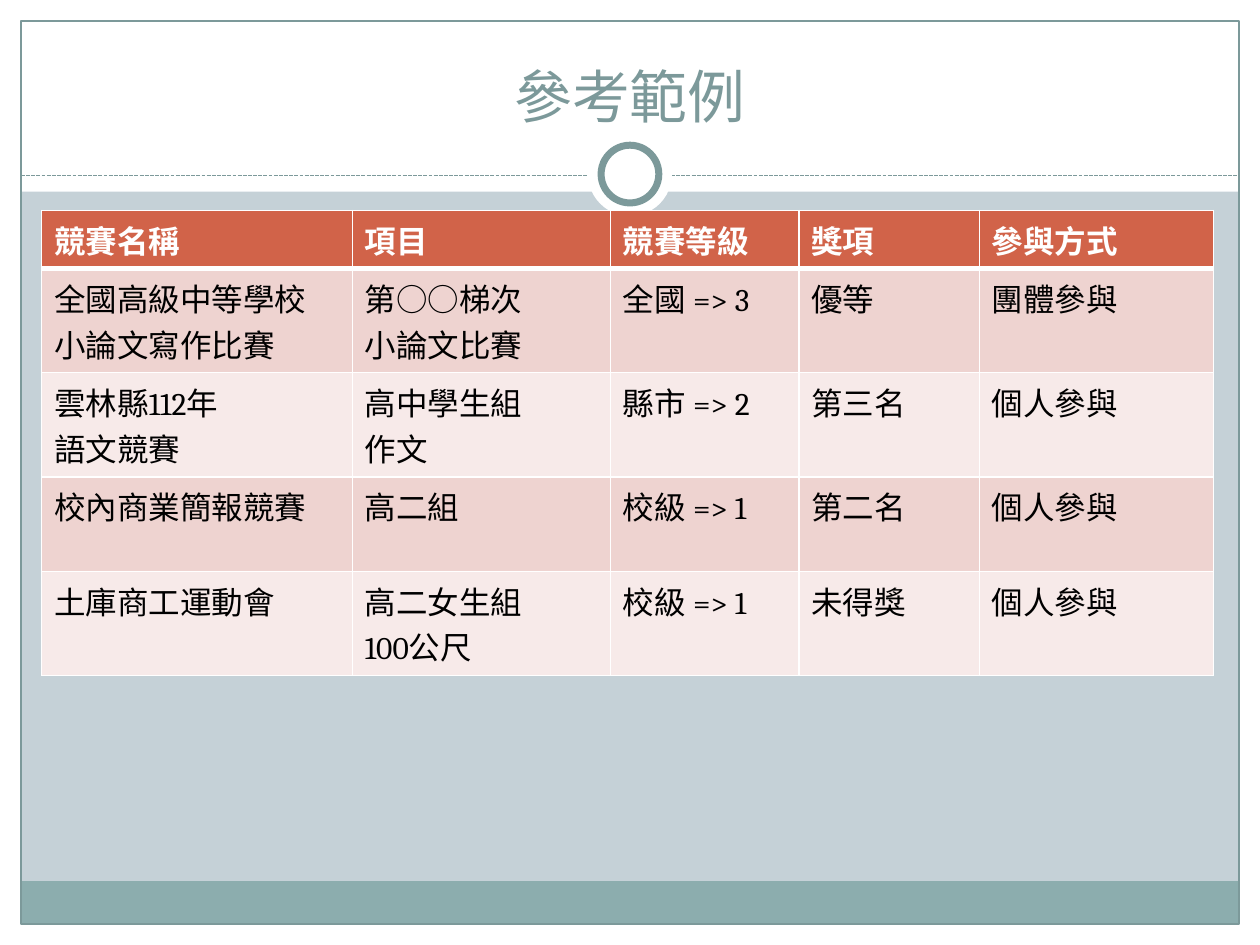
from lxml.etree import SubElement
from pptx import Presentation
from pptx.dml.color import RGBColor
from pptx.enum.dml import MSO_LINE
from pptx.enum.shapes import MSO_CONNECTOR, MSO_SHAPE
from pptx.enum.text import MSO_ANCHOR, MSO_AUTO_SIZE, PP_ALIGN
from pptx.oxml import parse_xml
from pptx.oxml.ns import nsdecls, qn
from pptx.util import Pt

WIDE, HIGH, EDGE = 720, 540, 12
WHITE, GREY, TEAL = "FFFFFF", "7C999A", "8CADAE"
FACE = "Cambria"
COLS = [177.5, 147.5, 107.7, 103.2, 133.9]
ROWS = [33, 59.5, 59.5, 54, 59.5]
DATA = [
    ["競賽名稱", "項目", "競賽等級", "獎項", "參與方式"],
    ["全國高級中等學校\n小論文寫作比賽", "第○○梯次\n小論文比賽", "全國 => 3", "優等", "團體參與"],
    ["雲林縣112年\n語文競賽", "高中學生組\n作文", "縣市 => 2", "第三名", "個人參與"],
    ["校內商業簡報競賽", "高二組", "校級 => 1", "第二名", "個人參與"],
    ["土庫商工運動會", "高二女生組\n100公尺", "校級 => 1", "未得獎", "個人參與"],
]


def paint(part, tone):
    part.solid()
    part.fore_color.rgb = RGBColor.from_string(tone)


def style(para, size, tone, bold=False):
    font = para.font
    font.name, font.size, font.bold = FACE, Pt(size), bold
    font.color.rgb = RGBColor.from_string(tone)


def block(slide, box, fill=None, line=None, width=0.75, kind=MSO_SHAPE.RECTANGLE):
    shape = slide.shapes.add_shape(kind, *map(Pt, box))
    shape.shadow.inherit = False
    if fill:
        paint(shape.fill, fill)
    else:
        shape.fill.background()
    if line:
        paint(shape.line.fill, line)
        shape.line.width = Pt(width)
    else:
        shape.line.fill.background()


def frame(slide, left, top, width, height):
    right, base = left + width, top + height
    band = 24.5
    block(slide, (left, base - EDGE, width, EDGE), WHITE)
    block(slide, (left, top, width, 109.5), WHITE)
    block(slide, (left, top, EDGE, height), WHITE)
    block(slide, (right - EDGE, top, EDGE, height), WHITE)
    inner = width - 2 * EDGE
    block(slide, (left + EDGE, base - EDGE - band, inner, band), TEAL)
    block(slide, (left + EDGE, top + EDGE, inner, height - 2 * EDGE), line=GREY)


def rule(slide, left, top, width):
    line = slide.shapes.add_connector(
        MSO_CONNECTOR.STRAIGHT, Pt(left), Pt(top), Pt(left + width), Pt(top))
    paint(line.line.fill, GREY)
    line.line.width = Pt(0.75)
    line.line.dash_style = MSO_LINE.SQUARE_DOT
    SubElement(line.element.spPr, qn("a:effectLst"))


def ring(slide, mid, top, size):
    block(slide, (mid - size / 2, top, size, size), WHITE, kind=MSO_SHAPE.OVAL)
    core, gap = size - 15, 7.5
    block(slide, (mid - core / 2, top + gap, core, core),
          WHITE, GREY, 4, MSO_SHAPE.OVAL)


def head(slide, left, top, width, height):
    title = slide.shapes.title
    title.left, title.top = Pt(left), Pt(top)
    title.width, title.height = Pt(width), Pt(height)
    slide.shapes.element.append(title.element)
    text = title.text_frame
    text.text = "參考範例"
    text.auto_size = MSO_AUTO_SIZE.NONE
    text.vertical_anchor = MSO_ANCHOR.BOTTOM
    para = text.paragraphs[0]
    para.alignment = PP_ALIGN.CENTER
    style(para, 33, GREY)


def border(cell, top, base):
    props = cell._tc.get_or_add_tcPr()
    sides = {"lnL": 1, "lnR": 1, "lnT": top, "lnB": base}
    for spot, (side, width) in enumerate(sides.items()):
        props.insert(spot, parse_xml(
            f'<a:{side} {nsdecls("a")} w="{Pt(width)}"><a:solidFill>'
            f'<a:srgbClr val="{WHITE}"/></a:solidFill></a:{side}>'))


def grid(slide, left, top):
    table = slide.shapes.add_table(
        len(ROWS), len(COLS), Pt(left), Pt(top), Pt(sum(COLS)), Pt(sum(ROWS))).table
    for col, width in zip(table.columns, COLS):
        col.width = Pt(width)
    for row, height in zip(table.rows, ROWS):
        row.height = Pt(height)
    for y, words in enumerate(DATA):
        first = y == 0
        fill = "D16349" if first else ("EED3D0" if y % 2 else "F7EAE9")
        for x, word in enumerate(words):
            cell = table.cell(y, x)
            cell.text = word
            paint(cell.fill, fill)
            border(cell, 3 if y == 1 else 1, 3 if first else 1)
            for para in cell.text_frame.paragraphs:
                style(para, 18, WHITE if first else "000000", first)


def main():
    deck = Presentation()
    deck.slide_width, deck.slide_height = Pt(WIDE), Pt(HIGH)
    slide = deck.slides.add_slide(deck.slide_layouts[5])
    paint(slide.background.fill, "C5D1D7")
    frame(slide, 0, 0, WIDE, HIGH)
    rule(slide, EDGE, 100.5, WIDE - 2 * EDGE)
    ring(slide, WIDE / 2, 75.5, 48)
    head(slide, 24, 18, 672, 60)
    grid(slide, 23.8, 120.2)
    deck.save("out.pptx")


if __name__ == "__main__":
    main()
